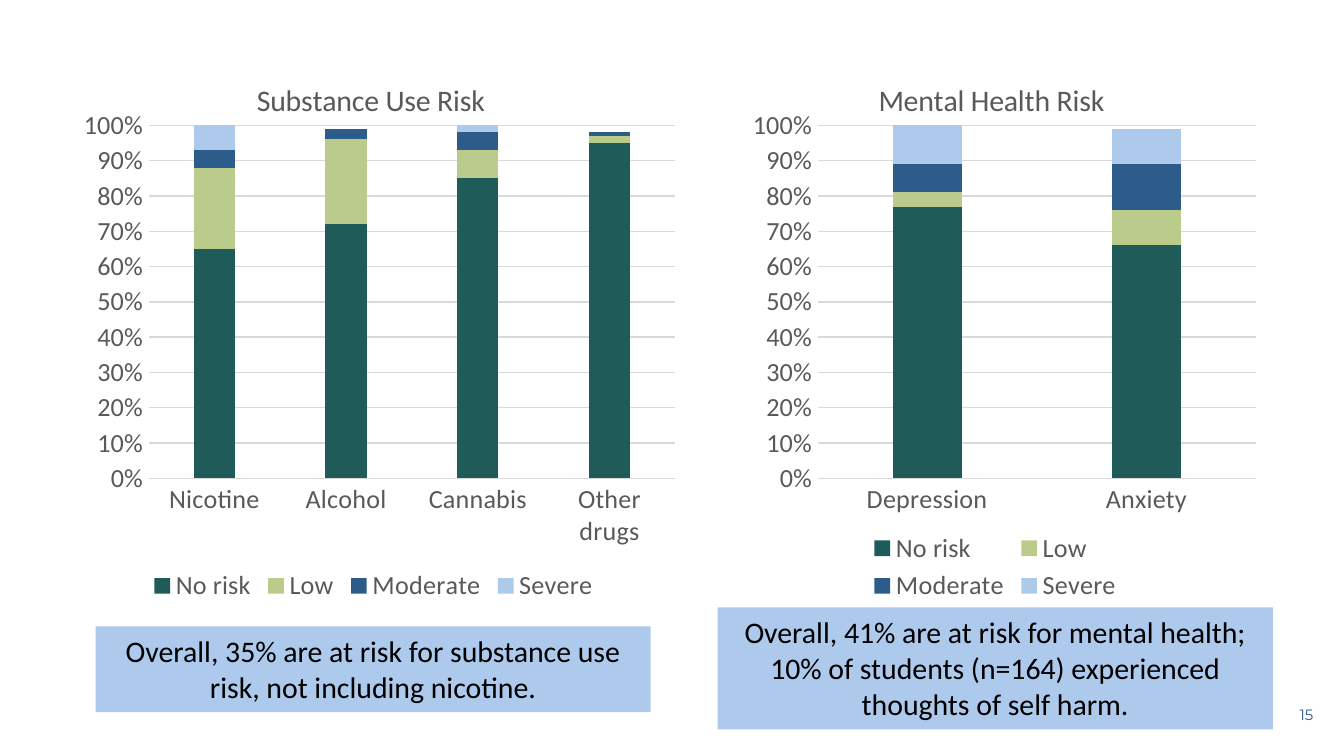
import pptx
import pptx.chart.data
import pptx.dml.color
import pptx.enum.chart
import pptx.enum.shapes
import pptx.enum.text
import pptx.oxml
import pptx.oxml.ns
import pptx.util

Pt = pptx.util.Pt
qn = pptx.oxml.ns.qn
XL = pptx.enum.chart
ALIGN = pptx.enum.text.PP_ALIGN
ANCHOR = pptx.enum.text.MSO_ANCHOR

COLORS = {
    "No risk": "1F5B59", "Low": "BBCB8B", "Moderate": "2D5B8A", "Severe": "ADCAED",
    "text": "000000", "label": "595959", "grid": "D9D9D9",
}
LABEL = {"name": "Calibri", "size": Pt(14), "bold": False}
TITLE = {"name": "Calibri", "size": Pt(16), "bold": False}
NUMBER = {"name": "Montserrat", "size": Pt(8)}


def rgb(key):
    return pptx.dml.color.RGBColor.from_string(COLORS[key])


def set_attrs(obj, values):
    for name, value in values.items():
        setattr(obj, name, value)


def style_font(font, values, color):
    set_attrs(font, values)
    font.color.rgb = rgb(color)


def style_line(line, color):
    line.color.rgb = rgb(color)
    line.width = Pt(0.75)


def set_layout(parent, index, values, inner=False):
    """Place a chart part by fractions of the chart's box."""
    for old in parent.findall(qn("c:layout")):
        parent.remove(old)
    parts = [("layoutTarget", "inner")] if inner else []
    parts += [("xMode", "edge"), ("yMode", "edge"), *values.items()]
    tags = "".join(f'<c:{tag} val="{val}"/>' for tag, val in parts)
    ns = pptx.oxml.ns.nsdecls("c")
    parent.insert(index, pptx.oxml.parse_xml(
        f"<c:layout {ns}><c:manualLayout>{tags}</c:manualLayout></c:layout>"))


def write(tf, text, align, font, color):
    p = tf.paragraphs[0]
    p.alignment = align
    r = p.add_run()
    r.text = text
    style_font(r.font, font, color)


def add_risk_chart(s, box, title, title_x, plot, cats, series):
    data = pptx.chart.data.CategoryChartData(number_format="0%")
    data.categories = cats
    for name, vals in series.items():
        data.add_series(name, vals)
    chart = s.shapes.add_chart(
        XL.XL_CHART_TYPE.COLUMN_STACKED, *map(Pt, box), data).chart
    style_font(chart.font, LABEL, "text")

    # Title
    chart.has_title = True
    tf = chart.chart_title.text_frame
    tf.text = title
    style_font(tf.paragraphs[0].runs[0].font, TITLE, "label")
    set_layout(chart.chart_title._element, 1, {"x": title_x, "y": 0.05})

    # Columns
    bars = chart.plots[0]
    set_attrs(bars, {"gap_width": 219, "overlap": 100, "vary_by_categories": False})
    for ser in bars.series:
        ser.format.fill.solid()
        ser.format.fill.fore_color.rgb = rgb(ser.name)
    set_layout(chart._chartSpace.chart.plotArea, 0,
               dict(zip("xywh", plot)), inner=True)

    # Axes
    for axis in (chart.category_axis, chart.value_axis):
        set_attrs(axis, {"major_tick_mark": XL.XL_TICK_MARK.NONE,
                         "minor_tick_mark": XL.XL_TICK_MARK.NONE})
        style_font(axis.tick_labels.font, LABEL, "label")
    style_line(chart.category_axis.format.line, "grid")
    axis = chart.value_axis
    set_attrs(axis, {"minimum_scale": 0, "maximum_scale": 1, "major_unit": 0.1,
                     "has_major_gridlines": True})
    set_attrs(axis.tick_labels, {"number_format": "0%",
                                 "number_format_is_linked": False})
    axis.format.line.fill.background()
    style_line(axis.major_gridlines.format.line, "grid")

    # Legend
    chart.has_legend = True
    set_attrs(chart.legend, {"position": XL.XL_LEGEND_POSITION.BOTTOM,
                             "include_in_layout": False})
    style_font(chart.legend.font, LABEL, "label")


def add_summary(s, box, text):
    sp = s.shapes.add_shape(pptx.enum.shapes.MSO_SHAPE.RECTANGLE, *map(Pt, box))
    sp.shadow.inherit = False
    sp.fill.solid()
    sp.fill.fore_color.rgb = rgb("Severe")
    sp.line.fill.background()
    set_attrs(sp.text_frame, {"word_wrap": True, "vertical_anchor": ANCHOR.TOP})
    write(sp.text_frame, text, ALIGN.CENTER, TITLE, "text")


def add_page_number(s, box, text):
    tf = s.shapes.add_textbox(*map(Pt, box)).text_frame
    set_attrs(tf, {"word_wrap": True, "vertical_anchor": ANCHOR.MIDDLE})
    set_attrs(tf, {f"margin_{side}": Pt(7.2)
                   for side in ("left", "top", "right", "bottom")})
    write(tf, text, ALIGN.RIGHT, NUMBER, "Moderate")


def main():
    prs = pptx.Presentation()
    set_attrs(prs, {"slide_width": Pt(720), "slide_height": Pt(405)})
    s = prs.slides.add_slide(prs.slide_layouts[6])

    add_page_number(s, (667.5, 367.2, 43.2, 31), "15")

    # Substance use
    add_risk_chart(
        s, (28, 25.2, 344.2, 300.2), "Substance Use Risk", 0.31,
        (0.15, 0.14, 0.82, 0.63),
        ["Nicotine", "Alcohol", "Cannabis", "Other drugs"],
        {"No risk": (0.65, 0.72, 0.85, 0.95), "Low": (0.23, 0.24, 0.08, 0.02),
         "Moderate": (0.05, 0.03, 0.05, 0.01), "Severe": (0.07, 0, 0.03, 0)})
    add_summary(s, (51.2, 335.5, 297.4, 46), "Overall, 35% are at risk for "
                "substance use risk, not including nicotine.")

    # Mental health
    add_risk_chart(
        s, (384.5, 25.2, 297.4, 300.2), "Mental Health Risk", 0.28,
        (0.18, 0.14, 0.79, 0.63),
        ["Depression", "Anxiety"],
        {"No risk": (0.77, 0.66), "Low": (0.04, 0.1),
         "Moderate": (0.08, 0.13), "Severe": (0.11, 0.1)})
    add_summary(s, (384.5, 325.4, 297.4, 65.4), "Overall, 41% are at risk for "
                "mental health; 10% of students (n=164) experienced thoughts "
                "of self harm.")

    prs.save("out.pptx")


if __name__ == "__main__":
    main()
